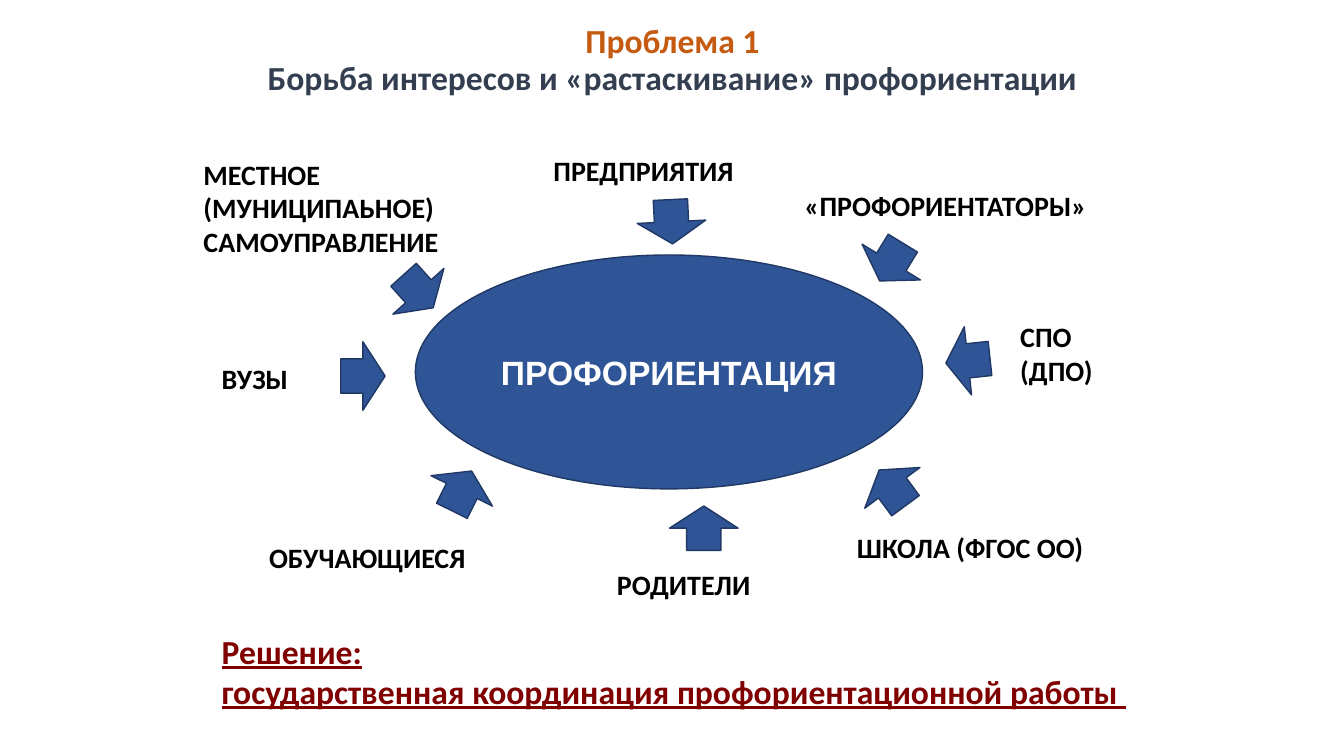
from dataclasses import dataclass

from pptx import Presentation
from pptx.dml.color import RGBColor
from pptx.enum.shapes import MSO_SHAPE as Shape
from pptx.enum.text import MSO_ANCHOR as Anchor, PP_ALIGN as Align
from pptx.util import Inches, Pt


@dataclass(frozen=True)
class Theme:
    accent: str = "C55A11"
    heading: str = "333F50"
    fill: str = "2F5597"
    outline: str = "203864"
    label: str = "000000"
    inverse: str = "FFFFFF"
    solution: str = "800000"
    body_font: str = "Calibri"
    center_font: str = "Arial"
    large: int = 24
    small: int = 20


class SlideBuilder:
    def __init__(self, slide, theme):
        self.slide = slide
        self.theme = theme

    def add_run(self, paragraph, text, size, color, font_name=None, underline=None):
        run = paragraph.add_run()
        run.text = text
        font = run.font
        font.name = font_name or self.theme.body_font
        font.size = Pt(size)
        font.bold = True
        font.underline = underline
        font.color.rgb = RGBColor.from_string(color)

    def text_frame(self, box, anchor=Anchor.TOP):
        shape = self.slide.shapes.add_textbox(*map(Inches, box))
        frame = shape.text_frame
        frame.word_wrap = True
        frame.vertical_anchor = anchor
        return frame

    def title(self, box, first, second):
        paragraph = self.text_frame(box, Anchor.MIDDLE).paragraphs[0]
        paragraph.alignment = Align.CENTER
        paragraph.line_spacing = 0.9
        self.add_run(paragraph, first, self.theme.large, self.theme.accent)
        paragraph.add_line_break()
        self.add_run(paragraph, second, self.theme.large, self.theme.heading)

    def text(self, box, lines, size, color, anchor=Anchor.TOP, underline=None):
        frame = self.text_frame(box, anchor)
        for index, line in enumerate(lines):
            paragraph = frame.add_paragraph() if index else frame.paragraphs[0]
            self.add_run(paragraph, line, size, color, underline=underline)

    def label(self, box, *lines):
        self.text(box, lines, self.theme.small, self.theme.label)

    def solution(self, box, *lines):
        self.text(box, lines, self.theme.large, self.theme.solution, Anchor.MIDDLE, True)

    def filled_shape(self, kind, box):
        shape = self.slide.shapes.add_shape(kind, *map(Inches, box))
        shape.shadow.inherit = False
        shape.fill.solid()
        shape.fill.fore_color.rgb = RGBColor.from_string(self.theme.fill)
        shape.line.color.rgb = RGBColor.from_string(self.theme.outline)
        shape.line.width = Pt(1)
        return shape

    def ellipse(self, box, text):
        frame = self.filled_shape(Shape.OVAL, box).text_frame
        frame.word_wrap = True
        frame.vertical_anchor = Anchor.MIDDLE
        paragraph = frame.paragraphs[0]
        paragraph.alignment = Align.CENTER
        self.add_run(paragraph, text, self.theme.large, self.theme.inverse,
                     self.theme.center_font)

    def arrow(self, left, top, rotation):
        shape = self.filled_shape(Shape.DOWN_ARROW, (left, top, 0.68, 0.44))
        shape.rotation = rotation


LABELS = [
    ((5.39, 1.47, 2.34, 0.44), "ПРЕДПРИЯТИЯ"),
    ((1.92, 1.51, 3.06, 1.11), "МЕСТНОЕ (МУНИЦИПАЬНОЕ) САМОУПРАВЛЕНИЕ"),
    ((2.1, 3.54, 1.51, 0.44), "ВУЗЫ"),
    ((10.02, 3.12, 1.15, 0.77), "СПО", "(ДПО)"),
    ((7.88, 1.82, 3.59, 0.44), "«ПРОФОРИЕНТАТОРЫ»"),
    ((2.57, 5.31, 2.55, 0.44), "ОБУЧАЮЩИЕСЯ"),
    ((6.02, 5.58, 1.83, 0.44), "РОДИТЕЛИ"),
    ((8.4, 5.21, 2.88, 0.44), "ШКОЛА (ФГОС ОО)"),
]

ARROWS = [
    (3.81, 2.67, 318.1),
    (8.5, 2.38, 31.5),
    (6.32, 1.98, 357.2),
    (3.26, 3.51, 270),
    (9.26, 3.36, 83.9),
    (4.24, 4.65, 206.4),
    (8.51, 4.62, 143.6),
    (6.64, 5.02, 180),
]


def main():
    presentation = Presentation()
    presentation.slide_width = Inches(13.33)
    presentation.slide_height = Inches(7.5)
    slide = presentation.slides.add_slide(presentation.slide_layouts[6])
    builder = SlideBuilder(slide, Theme())

    builder.title((2.17, -0.02, 9, 1.25), "Проблема 1",
                  "Борьба интересов и «растаскивание» профориентации")
    builder.ellipse((4.12, 2.53, 5.03, 2.32), "ПРОФОРИЕНТАЦИЯ")
    for box, *lines in LABELS:
        builder.label(box, *lines)
    for left, top, rotation in ARROWS:
        builder.arrow(left, top, rotation)
    builder.solution((2.1, 6.03, 9.37, 1.25), "Решение:",
                     "государственная координация профориентационной работы ")

    presentation.save("out.pptx")


if __name__ == "__main__":
    main()
